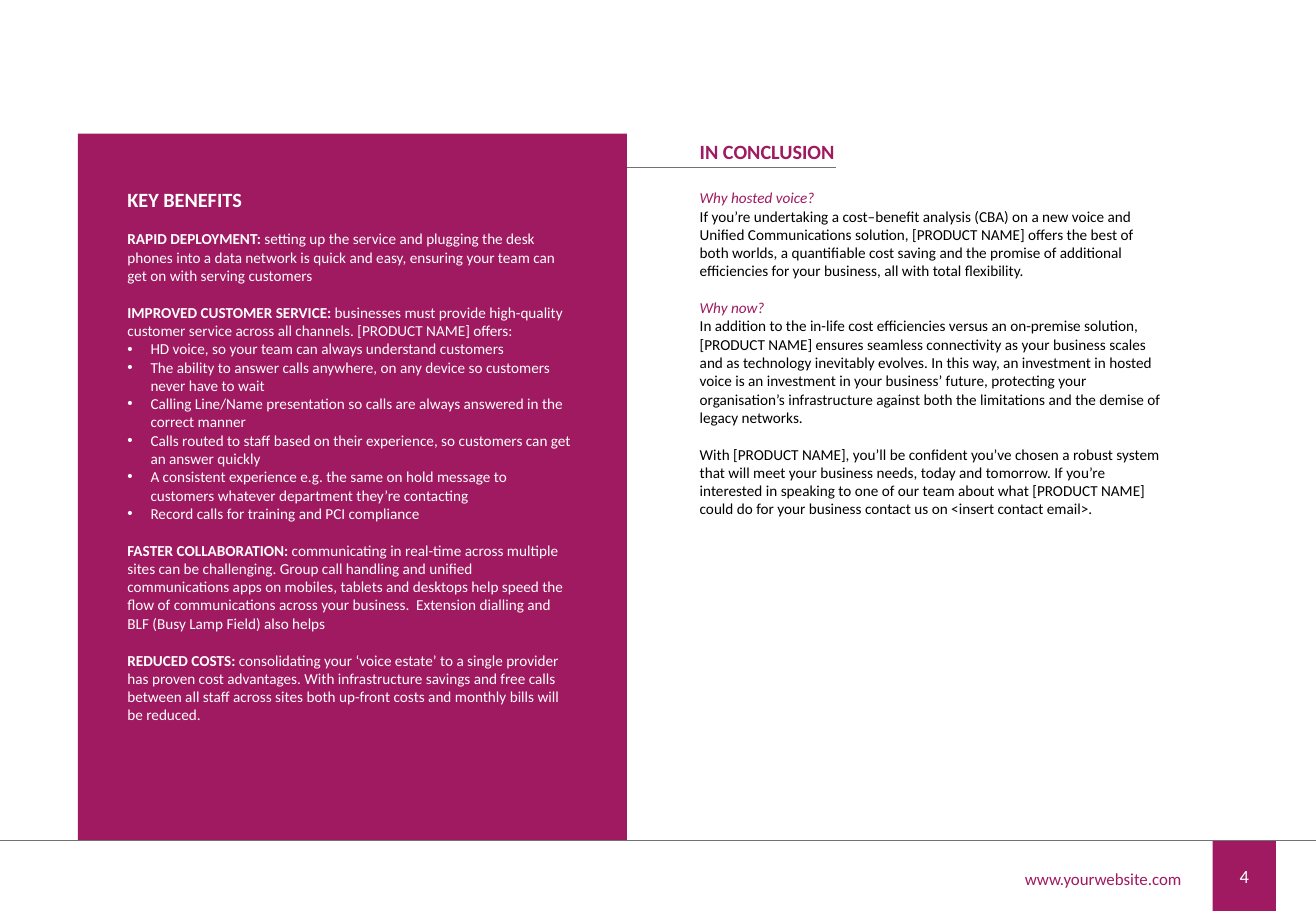
from lxml import etree
from pptx import Presentation
from pptx.dml.color import RGBColor
from pptx.enum.shapes import MSO_CONNECTOR, MSO_SHAPE
from pptx.enum.text import MSO_ANCHOR, PP_ALIGN
from pptx.oxml.ns import qn
from pptx.util import Inches, Pt

COLORS = {"plum": "9F1A60", "grey": "767171", "white": "FFFFFF", "black": "000000"}
WIDTH, HEIGHT = 10.83, 7.5
FOOTER_TOP = 6.92
PANEL_LEFT, PANEL_TOP, PANEL_WIDTH = 0.64, 1.1, 4.52
BULLET_INDENT = 0.19


def write(frame, text, lead="", size=9, color="black", bold=False, italic=False,
          align=PP_ALIGN.LEFT, gap=0, bullet=False):
    """Append a paragraph, with an optional bold lead-in and a gap in points above."""
    para = frame.paragraphs[0]
    if para.runs:
        para = frame.add_paragraph()
    para.alignment = align
    para.space_before = Pt(gap)
    for words, heavy in ((lead, True), (text, bold)):
        if words:
            span = para.add_run()
            span.text = words
            span.font.name = "Calibri"
            span.font.size = Pt(size)
            span.font.bold = heavy
            span.font.italic = italic
            span.font.color.rgb = RGBColor.from_string(COLORS[color])
    if bullet:
        properties = para._p.get_or_add_pPr()
        properties.set("marL", str(Inches(BULLET_INDENT)))
        properties.set("indent", str(-Inches(BULLET_INDENT)))
        etree.SubElement(properties, qn("a:buFont")).set("typeface", "Arial")
        etree.SubElement(properties, qn("a:buChar")).set("char", "•")


def add_frame(left, top, width, height):
    """Add a wrapping text box and return its text frame."""
    box = page.shapes.add_textbox(Inches(left), Inches(top), Inches(width), Inches(height))
    box.text_frame.word_wrap = True
    return box.text_frame


deck = Presentation()
deck.slide_width, deck.slide_height = Inches(WIDTH), Inches(HEIGHT)
page = deck.slides.add_slide(deck.slide_layouts[6])

# Plum panel and page number badge
blocks = []
for left, top, width, height in (
    (PANEL_LEFT, PANEL_TOP, PANEL_WIDTH, FOOTER_TOP - PANEL_TOP),
    (9.98, FOOTER_TOP, 0.52, HEIGHT - FOOTER_TOP),
):
    block = page.shapes.add_shape(
        MSO_SHAPE.RECTANGLE, Inches(left), Inches(top), Inches(width), Inches(height))
    block.shadow.inherit = False
    block.fill.solid()
    block.fill.fore_color.rgb = RGBColor.from_string(COLORS["plum"])
    block.line.fill.background()
    blocks.append(block)
panel, badge = blocks
badge.text_frame.vertical_anchor = MSO_ANCHOR.MIDDLE
write(badge.text_frame, "4", size=11, color="white", align=PP_ALIGN.CENTER)

# Rules under the conclusion heading and above the footer
for start, end, level in ((PANEL_LEFT + PANEL_WIDTH, 6.88, 1.38), (0, WIDTH, FOOTER_TOP)):
    rule = page.shapes.add_connector(
        MSO_CONNECTOR.STRAIGHT, Inches(start), Inches(level), Inches(end), Inches(level))
    rule.line.color.rgb = RGBColor.from_string(COLORS["grey"])
    rule.line.width = Pt(1)
    etree.SubElement(rule._element.spPr, qn("a:effectLst"))

website = add_frame(7.24, 7.1, 2.58, 0.27)
write(website, "www.yourwebsite.com", size=10, color="plum", align=PP_ALIGN.RIGHT)

# Key benefits
service_offers = [
    "HD voice, so your team can always understand customers",
    "The ability to answer calls anywhere, on any device so customers never have to wait",
    "Calling Line/Name presentation so calls are always answered in the correct manner",
    "Calls routed to staff based on their experience, so customers can get an answer quickly",
    "A consistent experience e.g. the same on hold message to customers whatever "
    "department they’re contacting",
    "Record calls for training and PCI compliance",
]
benefits = [
    ("RAPID DEPLOYMENT: ",
     "setting up the service and plugging the desk phones into a data network is quick and "
     "easy, ensuring your team can get on with serving customers", []),
    ("IMPROVED CUSTOMER SERVICE: ",
     "businesses must provide high-quality customer service across all channels. "
     "[PRODUCT NAME] offers:", service_offers),
    ("FASTER COLLABORATION: ",
     "communicating in real-time across multiple sites can be challenging. Group call "
     "handling and unified communications apps on mobiles, tablets and desktops help speed "
     "the flow of communications across your business.  Extension dialling and BLF (Busy "
     "Lamp Field) also helps", []),
    ("REDUCED COSTS: ",
     "consolidating your ‘voice estate’ to a single provider has proven cost advantages. "
     "With infrastructure savings and free calls between all staff across sites both "
     "up-front costs and monthly bills will be reduced.", []),
]
key_benefits = add_frame(0.95, 1.49, 3.85, 4.54)
write(key_benefits, "KEY BENEFITS", size=12, color="white", bold=True)
for lead, text, offers in benefits:
    write(key_benefits, text, lead=lead, color="white", gap=11)
    for offer in offers:
        write(key_benefits, offer, color="white", bullet=True)

# Conclusion
conclusion = add_frame(5.66, PANEL_TOP, 3.99, 3.38)
write(conclusion, "IN CONCLUSION", size=12, color="plum", bold=True)
write(conclusion, "Why hosted voice?", color="plum", italic=True, gap=14.65)
write(conclusion,
      "If you’re undertaking a cost–benefit analysis (CBA) on a new voice and Unified "
      "Communications solution, [PRODUCT NAME] offers the best of both worlds, a "
      "quantifiable cost saving and the promise of additional efficiencies for your "
      "business, all with total flexibility.")
write(conclusion, "Why now?", color="plum", italic=True, gap=11)
write(conclusion,
      "In addition to the in-life cost efficiencies versus an on-premise solution, "
      "[PRODUCT NAME] ensures seamless connectivity as your business scales and as "
      "technology inevitably evolves. In this way, an investment in hosted voice is an "
      "investment in your business’ future, protecting your organisation’s infrastructure "
      "against both the limitations and the demise of legacy networks.")
write(conclusion,
      "With [PRODUCT NAME], you’ll be confident you’ve chosen a robust system that will "
      "meet your business needs, today and tomorrow. If you’re interested in speaking to "
      "one of our team about what [PRODUCT NAME] could do for your business contact us on "
      "<insert contact email>.", gap=11)

deck.save("out.pptx")
